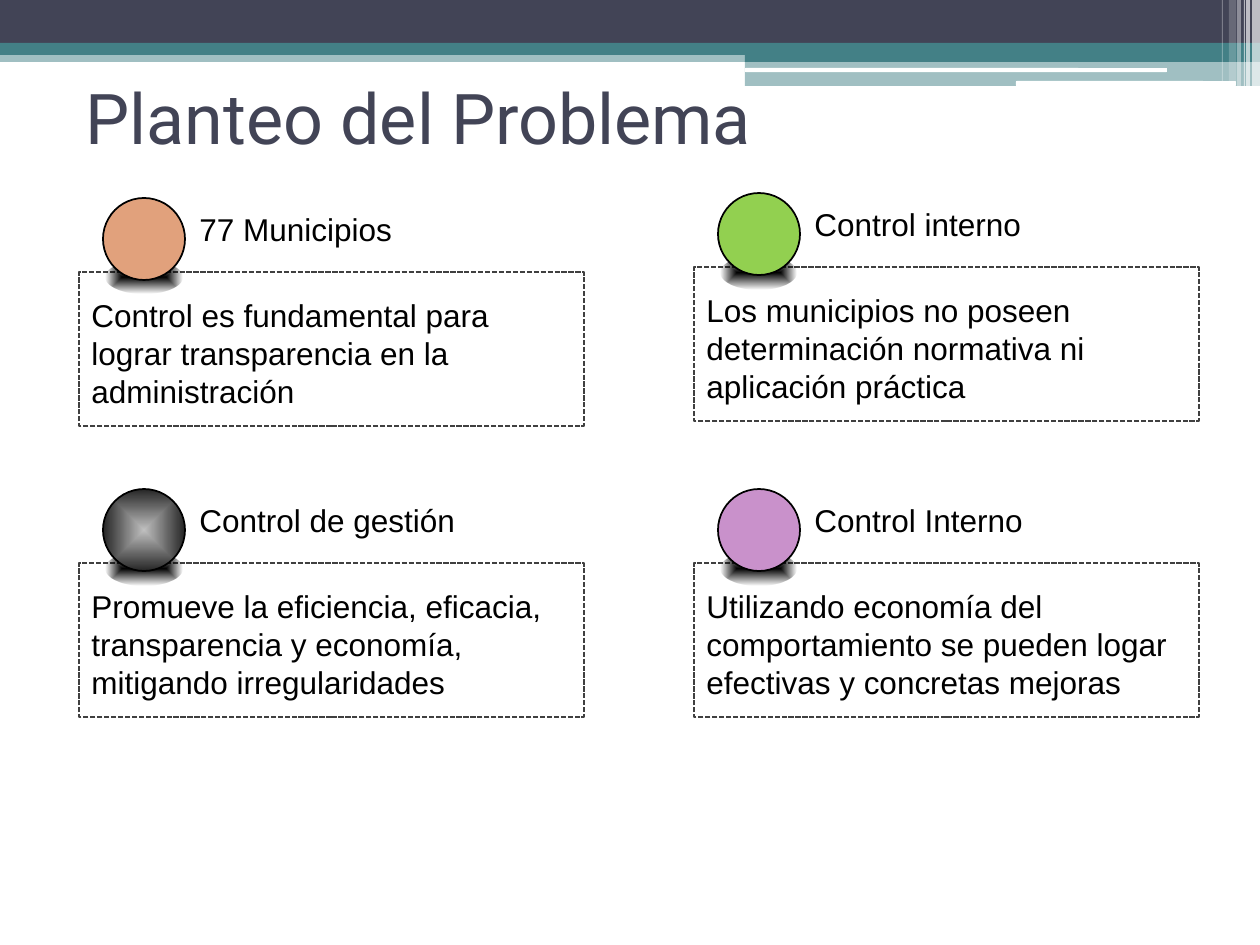
from lxml.etree import SubElement
from pptx import Presentation
from pptx.dml.color import RGBColor
from pptx.enum.dml import MSO_LINE_DASH_STYLE as Dash
from pptx.enum.shapes import MSO_SHAPE as Shape
from pptx.enum.text import MSO_ANCHOR as Anchor, MSO_AUTO_SIZE as AutoSize, PP_ALIGN as Align
from pptx.oxml import parse_xml
from pptx.oxml.ns import nsdecls, qn
from pptx.util import Emu, Pt

SCALE = 914400 / 126
NAVY, TEAL, WHITE, BLACK = "424456", "438086", "FFFFFF", "000000"

BANDS = [
    (0, 50, 1260, 12, TEAL, 50),
    (0, 0, 1260, 43, NAVY, 100),
    (0, 43, 1260, 12, TEAL, 100),
    (745, 49, 515, 13, TEAL, 100),
    (745, 61, 515, 25, TEAL, 50),
]
HIGHLIGHTS = [(745, 68, 422, 4), (1016, 81, 220, 5)]
STRIPES = [
    (1252, 8, 86, 65),
    (1246, 4, 86, 65),
    (1244, 1, 86, 60),
    (1237, 4, 86, 40),
    (1229, 7, 81, 20),
    (1222, 1, 81, 30),
]
SHADOW_STOPS = [(0, BLACK, 100), (100, BLACK, 0)]
GREY_STOPS = [(0, "BFBFBF", 100), (100, "262626", 100)]
CARDS = [
    (694, 193, "92D050", "Control interno",
     "Los municipios no poseen determinación normativa ni aplicación práctica"),
    (79, 198, "E1A17C", "77 Municipios",
     "Control es fundamental para lograr transparencia en la administración"),
    (694, 489, "C991CB", "Control Interno",
     "Utilizando economía del comportamiento se pueden logar efectivas y concretas mejoras"),
    (79, 489, GREY_STOPS, "Control de gestión",
     "Promueve la eficiencia, eficacia, transparencia y economía, mitigando irregularidades"),
]


def px(value):
    return Emu(round(value * SCALE))


def box(*lengths):
    return [px(length) for length in lengths]


def color(value):
    return RGBColor.from_string(value)


def set_all(target, **values):
    for name, value in values.items():
        setattr(target, name, value)


def fill_solid(shape, value, opacity=100):
    shape.fill.solid()
    shape.fill.fore_color.rgb = color(value)
    if opacity < 100:
        srgb = shape._element.spPr.find(qn("a:solidFill"))[0]
        SubElement(srgb, qn("a:alpha"), val=str(opacity * 1000))


def fill_gradient(shape, stops):
    stop_xml = "".join(
        f'<a:gs pos="{position * 1000}"><a:srgbClr val="{value}">'
        f'<a:alpha val="{opacity * 1000}"/></a:srgbClr></a:gs>'
        for position, value, opacity in stops
    )
    gradient = parse_xml(
        f'<a:gradFill {nsdecls("a")} rotWithShape="1"><a:gsLst>{stop_xml}</a:gsLst>'
        '<a:path path="shape"><a:fillToRect l="50000" t="50000" r="50000" b="50000"/>'
        "</a:path></a:gradFill>"
    )
    shape._element.spPr.find(qn("a:prstGeom")).addnext(gradient)


def add_shape(shapes, kind, bounds, fill=None, opacity=100, line=None, dash=None):
    shape = shapes.add_shape(kind, *box(*bounds))
    shape.shadow.inherit = False
    if fill is None:
        shape.fill.background()
    elif isinstance(fill, str):
        fill_solid(shape, fill, opacity)
    else:
        fill_gradient(shape, fill)
    if line is None:
        shape.line.fill.background()
    else:
        shape.line.color.rgb = color(line)
        set_all(shape.line, width=Pt(1), dash_style=dash)
    return shape


def write_text(shape, text, size, font, value, anchor):
    frame = shape.text_frame
    frame.text = text
    set_all(frame, word_wrap=True, auto_size=AutoSize.NONE, vertical_anchor=anchor)
    paragraph = frame.paragraphs[0]
    paragraph.alignment = Align.LEFT
    run_font = paragraph.runs[0].font
    set_all(run_font, size=Pt(size), name=font)
    run_font.color.rgb = color(value)


def draw_header(shapes):
    for *bounds, fill, opacity in BANDS:
        add_shape(shapes, Shape.RECTANGLE, bounds, fill, opacity)
    for bounds in HIGHLIGHTS:
        add_shape(shapes, Shape.ROUNDED_RECTANGLE, bounds, WHITE)
    for left, width, height, opacity in STRIPES:
        add_shape(shapes, Shape.RECTANGLE, (left, 0, width, height), WHITE, opacity)


def place_title(title, left, top, width, height):
    bounds = box(left, top, width, height)
    set_all(title, **dict(zip(("left", "top", "width", "height"), bounds)))
    write_text(title, "Planteo del Problema", 40, "Roboto", NAVY, Anchor.MIDDLE)


def draw_card(slide, left, top, fill, heading, body):
    shapes = slide.shapes.add_group_shape().shapes

    def add_text(text, x, y, width, height):
        text_box = shapes.add_textbox(*box(left + x, top + y, width, height))
        write_text(text_box, text, 18, "Arial", BLACK, Anchor.TOP)

    add_text(body, 0, 92, 505, 135)
    add_shape(shapes, Shape.RECTANGLE, (left, top + 74, 505, 154),
              line="404040", dash=Dash.SQUARE_DOT)
    add_shape(shapes, Shape.OVAL, (left + 27, top + 63, 76, 33), SHADOW_STOPS)
    add_shape(shapes, Shape.OVAL, (left + 24, top, 82, 82), fill, line=BLACK)
    add_text(heading, 108, 6, 397, 57)


def main():
    presentation = Presentation()
    set_all(presentation, slide_width=px(1260), slide_height=px(945))
    slide = presentation.slides.add_slide(presentation.slide_layouts[5])
    draw_header(slide.shapes)
    place_title(slide.shapes.title, 73, 42, 1134, 149)
    for card in CARDS:
        draw_card(slide, *card)
    presentation.save("out.pptx")


if __name__ == "__main__":
    main()
